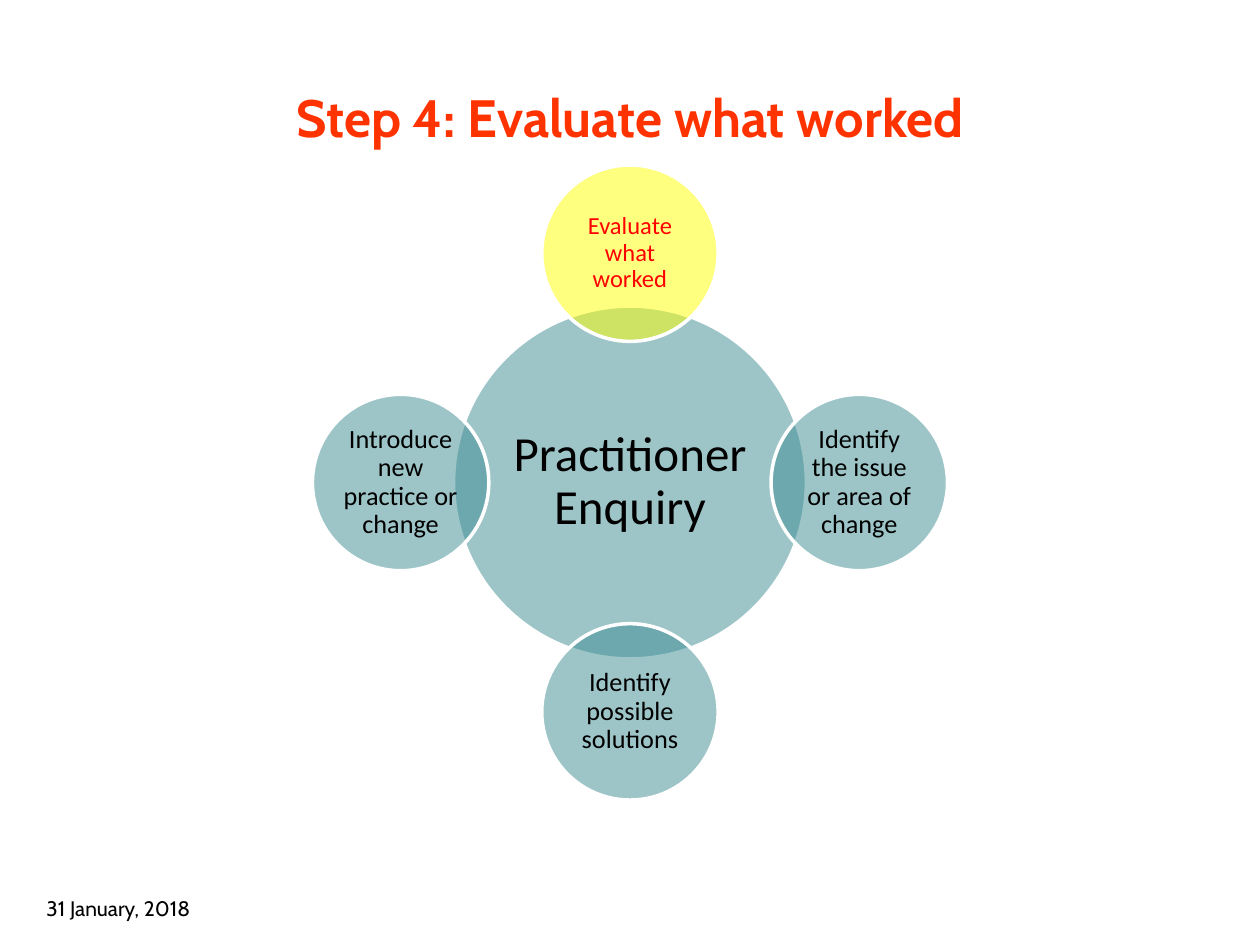
from math import cos, sin, radians

from lxml.etree import SubElement
from pptx import Presentation
from pptx.dml.color import RGBColor as RGB
from pptx.enum.shapes import MSO_SHAPE as Shape
from pptx.enum.text import MSO_ANCHOR as Anchor, PP_ALIGN as Align
from pptx.oxml.ns import qn
from pptx.util import Inches, Pt

BLACK = RGB(0, 0, 0)
WHITE = RGB(255, 255, 255)
RED = RGB(255, 0, 0)
ORANGE = RGB(0xFF, 0x33, 0x00)
YELLOW = RGB(255, 255, 0)
TEAL = RGB(0x3C, 0x8C, 0x93)

# Clockwise from the top: text, fill, text colour, size
STEPS = [
    ("Evaluate what worked", YELLOW, RED, 14),
    ("Identify the issue or area of change", TEAL, BLACK, 15),
    ("Identify possible solutions", TEAL, BLACK, 15),
    ("Introduce new practice or change", TEAL, BLACK, 15),
]


def write(shape, text, size, font="Calibri", color=BLACK, bold=False,
          align=Align.CENTER, anchor=Anchor.MIDDLE, inset=None, spacing=None):
    frame = shape.text_frame
    frame.word_wrap = True
    frame.vertical_anchor = anchor
    if inset is not None:
        frame.margin_left = frame.margin_right = Inches(inset)
        frame.margin_top = frame.margin_bottom = Inches(inset)
    para = frame.paragraphs[0]
    para.alignment = align
    para.line_spacing = spacing
    run = para.add_run()
    run.text = text
    run.font.size = Pt(size)
    run.font.name = font
    run.font.bold = bold
    run.font.color.rgb = color


def add_label(slide, box, text, size, **style):
    label = slide.shapes.add_textbox(*map(Inches, box))
    write(label, text, size, font="Cabin", **style)


def add_disc(slide, x, y, size, fill):
    """Half-transparent circle centred on x, y."""
    disc = slide.shapes.add_shape(Shape.OVAL, Inches(x - size / 2),
                                  Inches(y - size / 2), Inches(size), Inches(size))
    disc.shadow.inherit = False
    disc.fill.solid()
    disc.fill.fore_color.rgb = fill
    tint = disc.fill._xPr.find(qn("a:solidFill"))[0]
    SubElement(tint, qn("a:alpha"), val="50000")
    disc.line.color.rgb = WHITE
    disc.line.width = Pt(2)
    return disc


def add_cycle(slide, left, top, size):
    """Hub with the steps around it, filling a square box."""
    hub, sat = size * 5 / 9, size * 5 / 18
    x, y = left + size / 2, top + size / 2
    orbit = (size - sat) / 2
    write(add_disc(slide, x, y, hub, TEAL), "Practitioner Enquiry", 28,
          inset=0.04, spacing=0.9)
    for i, (text, fill, color, points) in enumerate(STEPS):
        turn = radians(360 * i / len(STEPS) - 90)
        disc = add_disc(slide, x + orbit * cos(turn), y + orbit * sin(turn), sat, fill)
        write(disc, text, points, color=color, inset=0.02, spacing=0.9)


def main():
    deck = Presentation()
    deck.slide_width, deck.slide_height = Inches(10), Inches(7.5)
    slide = deck.slides.add_slide(deck.slide_layouts[6])
    add_label(slide, (0.27, 7.06, 2.95, 0.3), "31 January, 2018", 12,
              align=Align.LEFT, anchor=Anchor.TOP)
    add_label(slide, (0.5, 0.3, 9, 1.25), "Step 4: Evaluate what worked", 30,
              color=ORANGE, bold=True)
    add_cycle(slide, 2.48, 1.31, 5.04)
    deck.save("out.pptx")


if __name__ == "__main__":
    main()
